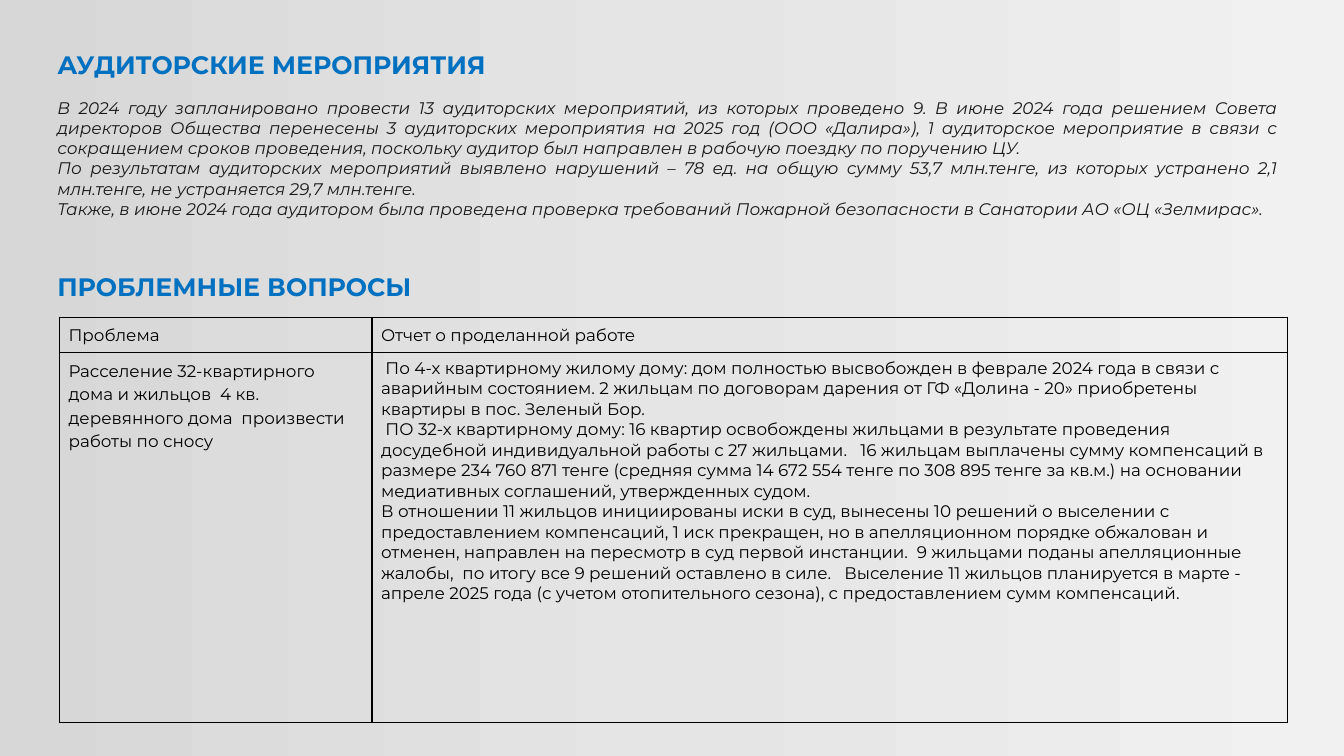
from copy import deepcopy
from dataclasses import dataclass

from pptx import Presentation
from pptx.dml.color import RGBColor
from pptx.enum.shapes import MSO_SHAPE as Preset
from pptx.enum.text import MSO_AUTO_SIZE as AutoSize, PP_ALIGN as Align
from pptx.oxml import parse_xml
from pptx.oxml.ns import nsdecls, qn
from pptx.slide import Slide
from pptx.table import _Cell as Cell
from pptx.text.text import TextFrame
from pptx.util import Inches, Pt

FONT = "Montserrat"
BLUE = RGBColor(0x00, 0x70, 0xC0)
DARK = RGBColor(0x1A, 0x1A, 0x1A)
BLACK = RGBColor(0x00, 0x00, 0x00)
GRADIENT = [
    (0.0, RGBColor(0xD7, 0xD7, 0xD7)),
    (0.5, RGBColor(0xE5, 0xE5, 0xE5)),
    (1.0, RGBColor(0xF1, 0xF1, 0xF1)),
]
SLIDE_WIDTH, SLIDE_HEIGHT = 13.33, 7.5
TEXT_LEFT = 0.47
BORDER_WIDTH = Pt(0.96)


@dataclass(frozen=True)
class Style:
    size: float
    color: RGBColor
    bold: bool = False
    italic: bool = False
    align: Align | None = None
    line_spacing: float | None = None
    space_after: float | None = None


@dataclass(frozen=True)
class TextBlock:
    top: float
    width: float
    height: float
    style: Style
    paragraphs: list[str]


HEADING = Style(18, BLUE, bold=True)
SUMMARY = Style(12, DARK, italic=True, align=Align.JUSTIFY)
CELL_LOOSE = Style(12, BLACK, line_spacing=1.15, space_after=10)
CELL_TIGHT = Style(12, BLACK)

TEXT_BLOCKS = [
    TextBlock(0.44, 6.1, 0.4, HEADING, ["АУДИТОРСКИЕ МЕРОПРИЯТИЯ"]),
    TextBlock(0.92, 12.31, 1.3, SUMMARY, [
        "В 2024 году запланировано провести 13 аудиторских мероприятий, из которых "
        "проведено 9. В июне 2024 года решением Совета директоров Общества перенесены "
        "3 аудиторских мероприятия на 2025 год (ООО «Далира»), 1 аудиторское мероприятие "
        "в связи с сокращением сроков проведения, поскольку аудитор был направлен в "
        "рабочую поездку по поручению ЦУ.",
        "По результатам аудиторских мероприятий выявлено нарушений – 78 ед. на общую "
        "сумму 53,7 млн.тенге, из которых устранено 2,1 млн.тенге, не устраняется "
        "29,7 млн.тенге.",
        "Также, в июне 2024 года аудитором была проведена проверка требований Пожарной "
        "безопасности в Санатории АО «ОЦ «Зелмирас».",
    ]),
    TextBlock(2.64, 6.1, 0.4, HEADING, ["ПРОБЛЕМНЫЕ ВОПРОСЫ"]),
]

COLUMN_WIDTHS = [3.1, 9.08]
ROW_HEIGHTS = [0.35, 3.67]
TABLE_ROWS = [
    [
        (CELL_LOOSE, ["Проблема"]),
        (CELL_LOOSE, ["Отчет о проделанной работе"]),
    ],
    [
        (CELL_LOOSE, [
            "Расселение 32-квартирного дома и жильцов  4 кв. деревянного дома  "
            "произвести работы по сносу",
        ]),
        (CELL_TIGHT, [
            " По 4-х квартирному жилому дому: дом полностью высвобожден в феврале 2024 "
            "года в связи с аварийным состоянием. 2 жильцам по договорам дарения от ГФ "
            "«Долина - 20» приобретены квартиры в пос. Зеленый Бор.",
            " ПО 32-х квартирному дому: 16 квартир освобождены жильцами в результате "
            "проведения досудебной индивидуальной работы с 27 жильцами.   16 жильцам "
            "выплачены сумму компенсаций в размере 234 760 871 тенге (средняя сумма "
            "14 672 554 тенге по 308 895 тенге за кв.м.) на основании медиативных "
            "соглашений, утвержденных судом.",
            "В отношении 11 жильцов инициированы иски в суд, вынесены 10 решений о "
            "выселении с предоставлением компенсаций, 1 иск прекращен, но в апелляционном "
            "порядке обжалован и отменен, направлен на пересмотр в суд первой инстанции.  "
            "9 жильцами поданы апелляционные жалобы,  по итогу все 9 решений оставлено в "
            "силе.   Выселение 11 жильцов планируется в марте - апреле 2025 года (с учетом "
            "отопительного сезона), с предоставлением сумм компенсаций.",
        ]),
    ],
]


def write_paragraphs(frame: TextFrame, paragraphs: list[str], style: Style) -> None:
    for index, text in enumerate(paragraphs):
        paragraph = frame.add_paragraph() if index else frame.paragraphs[0]
        paragraph.alignment = style.align
        paragraph.line_spacing = style.line_spacing
        if style.space_after is not None:
            paragraph.space_after = Pt(style.space_after)
        run = paragraph.add_run()
        run.text = text
        run.font.name = FONT
        run.font.size = Pt(style.size)
        run.font.bold = style.bold
        run.font.italic = style.italic
        run.font.color.rgb = style.color


def add_backdrop(slide: Slide) -> None:
    shape = slide.shapes.add_shape(
        Preset.RECTANGLE, 0, 0, Inches(SLIDE_WIDTH), Inches(SLIDE_HEIGHT))
    shape.shadow.inherit = False
    shape.line.fill.background()
    shape.fill.gradient()
    shape.fill.gradient_angle = 0
    # The default gradient has two stops; the middle one is added
    stop_list = next(shape._element.iter(qn("a:gsLst")))
    stop_list.insert(1, deepcopy(stop_list[0]))
    for element, stop, (position, color) in zip(
            stop_list, shape.fill.gradient_stops, GRADIENT):
        stop.color.rgb = color
        element.set("pos", str(int(position * 100000)))


def add_text_block(slide: Slide, block: TextBlock) -> None:
    box = slide.shapes.add_textbox(
        Inches(TEXT_LEFT), Inches(block.top), Inches(block.width), Inches(block.height))
    frame = box.text_frame
    frame.word_wrap = True
    frame.auto_size = AutoSize.SHAPE_TO_FIT_TEXT
    write_paragraphs(frame, block.paragraphs, block.style)


def set_borders(cell: Cell) -> None:
    properties = cell._tc.get_or_add_tcPr()
    for index, side in enumerate(("lnL", "lnR", "lnT", "lnB")):
        properties.insert(index, parse_xml(
            f'<a:{side} {nsdecls("a")} w="{int(BORDER_WIDTH)}"><a:solidFill>'
            f'<a:srgbClr val="{BLACK}"/></a:solidFill></a:{side}>'))


def add_problem_table(slide: Slide) -> None:
    table = slide.shapes.add_table(
        len(ROW_HEIGHTS), len(COLUMN_WIDTHS), Inches(0.59), Inches(3.15),
        Inches(sum(COLUMN_WIDTHS)), Inches(sum(ROW_HEIGHTS))).table
    table.first_row = False
    table.horz_banding = False
    for column, width in zip(table.columns, COLUMN_WIDTHS):
        column.width = Inches(width)
    for row, height, contents in zip(table.rows, ROW_HEIGHTS, TABLE_ROWS):
        row.height = Inches(height)
        for cell, (style, paragraphs) in zip(row.cells, contents):
            cell.fill.background()
            cell.margin_left = cell.margin_right = Inches(0.09)
            cell.margin_top = cell.margin_bottom = Inches(0.05)
            set_borders(cell)
            write_paragraphs(cell.text_frame, paragraphs, style)


def main() -> None:
    presentation = Presentation()
    presentation.slide_width = Inches(SLIDE_WIDTH)
    presentation.slide_height = Inches(SLIDE_HEIGHT)
    slide = presentation.slides.add_slide(presentation.slide_layouts[6])

    add_backdrop(slide)
    for block in TEXT_BLOCKS:
        add_text_block(slide, block)
    add_problem_table(slide)

    presentation.save("out.pptx")


if __name__ == "__main__":
    main()
